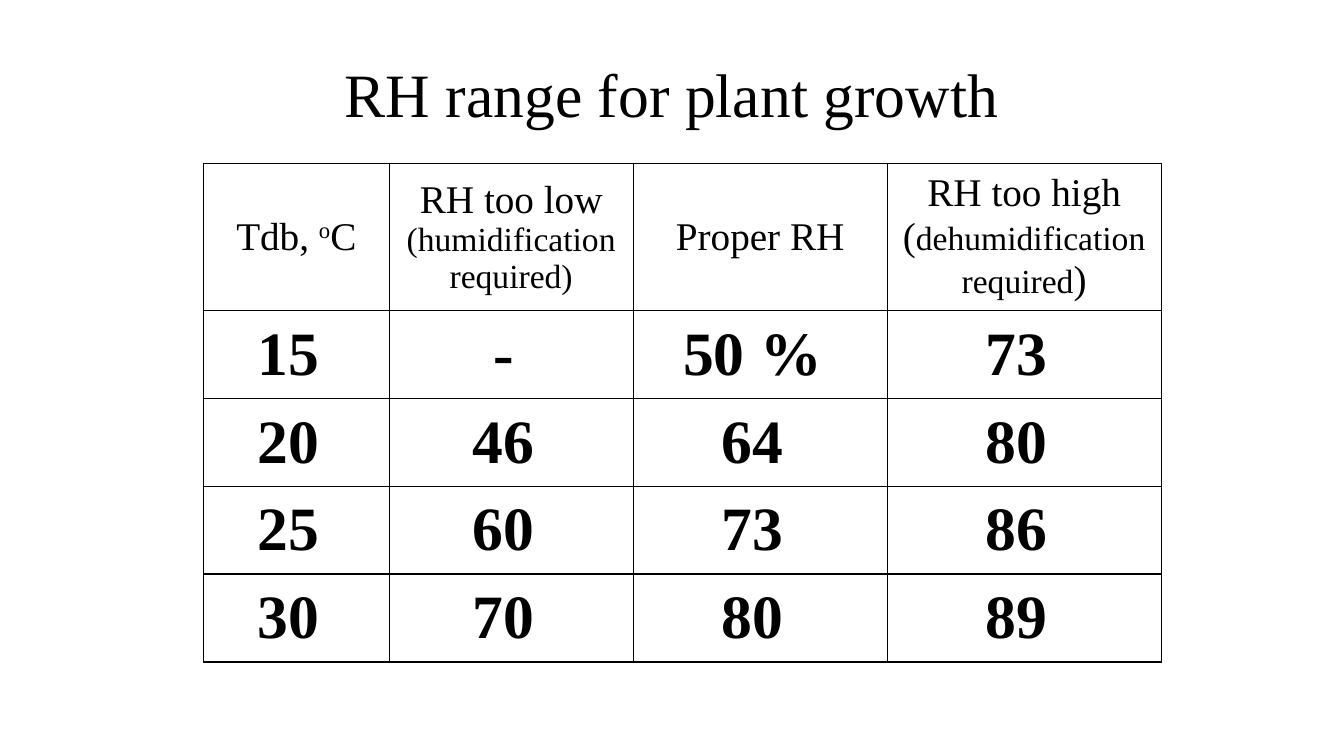
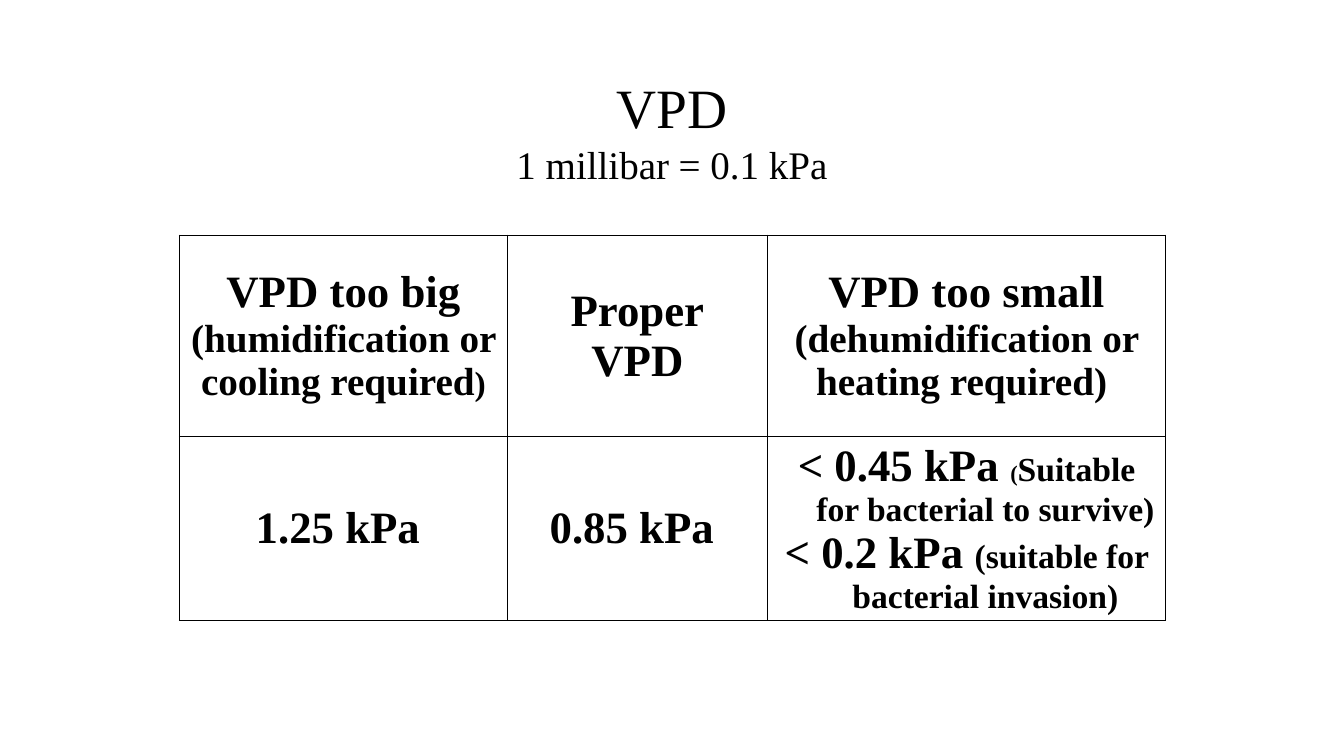
from lxml import etree
from pptx import Presentation
from pptx.dml.color import RGBColor
from pptx.enum.text import MSO_ANCHOR, MSO_AUTO_SIZE, PP_ALIGN
from pptx.oxml.ns import qn
from pptx.util import Pt

CENTER = PP_ALIGN.CENTER
MIDDLE = MSO_ANCHOR.MIDDLE
NO_FIT = MSO_AUTO_SIZE.NONE
FONT = "Times New Roman"
BLACK = "000000"
HANGING = 27


def color(value):
    return RGBColor.from_string(value)


def write(paragraph, text, size=28, bold=False, raised=False):
    paragraph.alignment = CENTER
    for number, line in enumerate(text.split("\n")):
        if number:
            paragraph.add_line_break()
        if not line:
            continue
        run = paragraph.add_run()
        run.text = line
        run.font.name = FONT
        run.font.size = Pt(size)
        run.font.bold = bold
        run.font.color.rgb = color(BLACK)
        if raised:
            run.font._element.set("baseline", "30000")


growth_rows = [
    [
        (True, [[("Tdb, ", 28), ("o", 28, False, True), ("C", 28)]]),
        (False, [[("RH too low ", 28), ("(humidification required)", 24)]]),
        (True, [[("Proper RH", 28)]]),
        (False, [[("RH too high", 28)],
                 [("(", 28), ("dehumidification required", 24), (")", 28)]]),
    ]
]
for readings in [
    ("15", "-", "50 %", "73"),
    ("20", "46", "64", "80"),
    ("25", "60", "73", "86"),
    ("30", "70", "80", "89"),
]:
    growth_rows.append([(True, [[(reading + " ", 44, True)]]) for reading in readings])

vpd_rows = [
    [
        (False, [[("VPD too big", 32, True)],
                 [("(humidification or cooling required", 28, True), (")", 24, True)]]),
        (False, [[("Proper", 32, True)], [("VPD", 32, True)]]),
        (False, [[("VPD too small\n", 32, True),
                  ("(dehumidification or heating required) ", 28, True)]]),
    ],
    [
        (True, [[("1.25 kPa ", 32, True)]]),
        (True, [[("0.85 kPa ", 32, True)]]),
        (True, [[("< 0.45 kPa ", 32, True), ("(", 16, True),
                 ("Suitable for bacterial to survive)", 24, True)],
                [("< 0.2 kPa ", 32, True),
                 ("(suitable for bacterial invasion)", 24, True)]]),
    ],
]

pages = [
    {
        "title": [("RH range for plant growth", 44)],
        "title_box": (174, 21, 612, 90),
        "corner": (145.3, 116.7),
        "widths": [132.7, 174.3, 181.4, 195.8],
        "heights": [105] + [62.8] * 4,
        "rows": growth_rows,
    },
    {
        "title": [("VPD\n", 39.6), ("1 millibar = 0.1 kPa", 27.9)],
        "title_box": (72, 48, 816, 90),
        "corner": (128.2, 168),
        "widths": [234.3, 185.7, 284.4],
        "heights": [144, 131.4],
        "rows": vpd_rows,
    },
]

prs = Presentation()
prs.slide_width, prs.slide_height = Pt(960), Pt(540)
title_only = prs.slide_layouts[5]

for page in pages:
    slide = prs.slides.add_slide(title_only)
    heading = slide.shapes.title
    heading.left, heading.top, heading.width, heading.height = map(Pt, page["title_box"])
    heading.text_frame.word_wrap = True
    heading.text_frame.auto_size = NO_FIT
    heading.text_frame.vertical_anchor = MIDDLE
    for part in page["title"]:
        write(heading.text_frame.paragraphs[0], *part)

    widths, heights = page["widths"], page["heights"]
    left, top = page["corner"]
    grid = slide.shapes.add_table(
        len(heights), len(widths), Pt(left), Pt(top), Pt(sum(widths)), Pt(sum(heights))
    ).table
    grid.first_row = False
    grid.horz_banding = False
    for column, width in zip(grid.columns, widths):
        column.width = Pt(width)
    for row, height in zip(grid.rows, heights):
        row.height = Pt(height)

    for row, entries in zip(grid.rows, page["rows"]):
        for cell, (hanging, paragraphs) in zip(row.cells, entries):
            cell.vertical_anchor = MIDDLE
            properties = cell._tc.get_or_add_tcPr()
            for side in ("lnL", "lnR", "lnT", "lnB"):
                border = etree.SubElement(properties, qn("a:" + side), w=str(Pt(1)))
                solid = etree.SubElement(border, qn("a:solidFill"))
                etree.SubElement(solid, qn("a:srgbClr"), val=BLACK)
            cell.fill.background()
            for number, parts in enumerate(paragraphs):
                frame = cell.text_frame
                paragraph = frame.add_paragraph() if number else frame.paragraphs[0]
                if hanging:
                    indents = paragraph._p.get_or_add_pPr()
                    indents.set("marL", str(Pt(HANGING)))
                    indents.set("indent", str(Pt(-HANGING)))
                for part in parts:
                    write(paragraph, *part)

prs.save("out.pptx")
